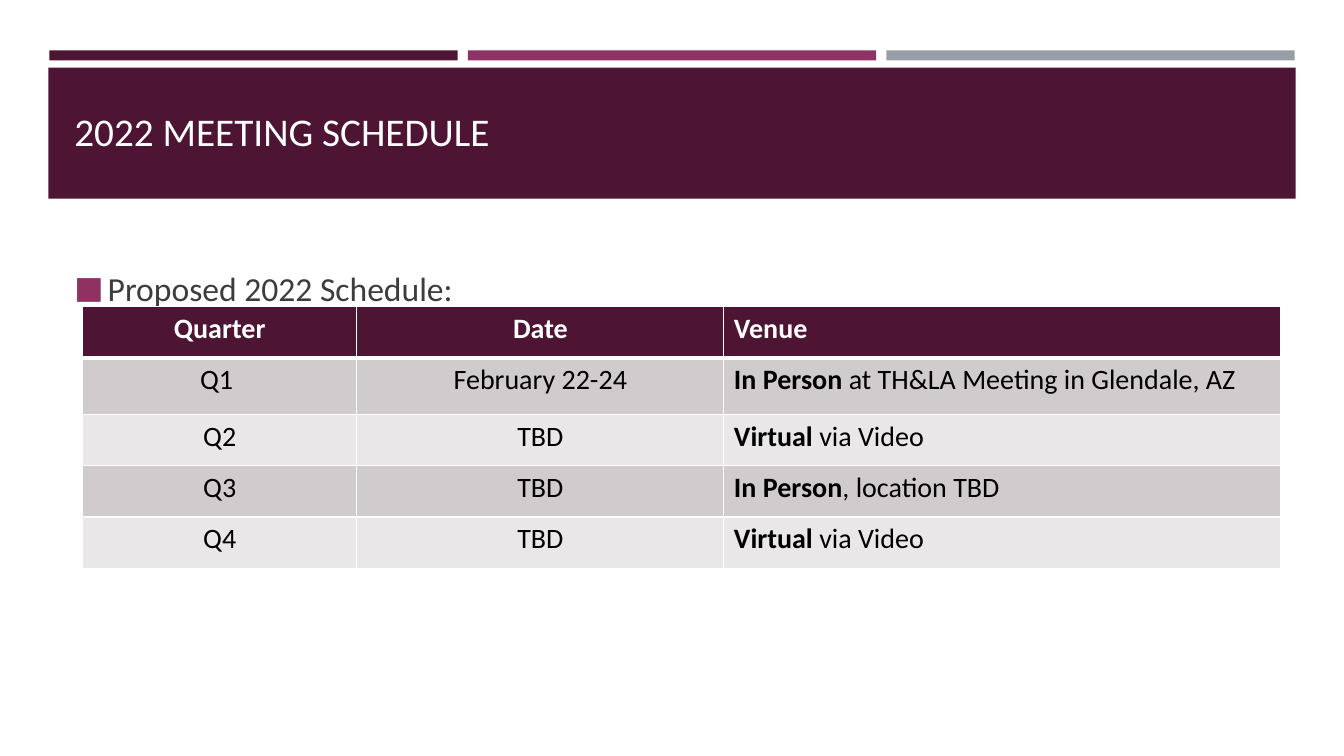
from dataclasses import dataclass

from lxml import etree
from pptx import Presentation
from pptx import util as u
from pptx.dml.color import RGBColor
from pptx.enum import shapes, text
from pptx.oxml import ns


@dataclass(frozen=True)
class Theme:
    font: str = "Calibri"
    plum: str = "4D1434"
    magenta: str = "903163"
    gray: str = "969FA7"
    white: str = "FFFFFF"
    black: str = "000000"
    body_text: str = "3D3D3D"
    bands: tuple = ("D0CCCE", "E9E7E8")
    title_size: int = 28
    body_size: int = 24
    table_size: int = 20


class ScheduleSlide:
    """Holds the theme and the current slide."""

    def __init__(self, deck, theme):
        self.theme = theme
        self.slide = deck.slides.add_slide(deck.slide_layouts[6])

    def bar(self, left, top, width, height, color):
        bar = self.slide.shapes.add_shape(
            shapes.MSO_SHAPE.RECTANGLE, *map(u.Inches, (left, top, width, height)))
        bar.shadow.inherit = False
        bar.fill.solid()
        bar.fill.fore_color.rgb = RGBColor.from_string(color)
        bar.line.fill.background()

    def run(self, paragraph, words, size, color, bold=False):
        run = paragraph.add_run()
        run.text = words
        formats = {"name": self.theme.font, "size": u.Pt(size), "bold": bold}
        for key, value in formats.items():
            setattr(run.font, key, value)
        run.font.color.rgb = RGBColor.from_string(color)

    def text_box(self, left, top, width, height, words, size, color, anchor):
        box = self.slide.shapes.add_textbox(
            *map(u.Inches, (left, top, width, height)))
        formats = {"word_wrap": True, "vertical_anchor": anchor}
        for key, value in formats.items():
            setattr(box.text_frame, key, value)
        paragraph = box.text_frame.paragraphs[0]
        self.run(paragraph, words, size, color)
        return paragraph

    def bullet(self, paragraph, color, indent):
        properties = paragraph._p.get_or_add_pPr()
        properties.set("marL", str(u.Inches(indent)))
        properties.set("indent", str(-u.Inches(indent)))
        bullet_color = etree.SubElement(properties, ns.qn("a:buClr"))
        etree.SubElement(bullet_color, ns.qn("a:srgbClr"), val=color)
        etree.SubElement(properties, ns.qn("a:buSzPct"), val="92000")
        etree.SubElement(properties, ns.qn("a:buFont"), typeface=self.theme.font)
        etree.SubElement(properties, ns.qn("a:buChar"), char="■")

    def borders(self, cell, widths):
        properties = cell._tc.get_or_add_tcPr()
        for index, (side, width) in enumerate(widths.items()):
            line = etree.Element(ns.qn(f"a:ln{side}"), w=str(u.Pt(width)))
            fill = etree.SubElement(line, ns.qn("a:solidFill"))
            etree.SubElement(fill, ns.qn("a:srgbClr"), val=self.theme.white)
            properties.insert(index, line)

    def table(self, left, top, columns, heights, rows):
        theme = self.theme
        table = self.slide.shapes.add_table(
            len(rows), len(columns), u.Inches(left), u.Inches(top),
            u.Inches(sum(columns)), u.Inches(sum(heights))).table
        for column, width in zip(table.columns, columns):
            column.width = u.Inches(width)
        for r, (row, height) in enumerate(zip(rows, heights)):
            table.rows[r].height = u.Inches(height)
            header = r == 0
            for c, pieces in enumerate(row):
                cell = table.cell(r, c)
                cell.fill.solid()
                cell.fill.fore_color.rgb = RGBColor.from_string(
                    theme.plum if header else theme.bands[(r - 1) % 2])
                # A heavier rule separates the header from the rows
                self.borders(cell, {"L": 1, "R": 1, "T": 3 if r == 1 else 1,
                                    "B": 3 if header else 1})
                paragraph = cell.text_frame.paragraphs[0]
                paragraph.alignment = (text.PP_ALIGN.LEFT if c == 2
                                       else text.PP_ALIGN.CENTER)
                for words, bold in pieces:
                    self.run(paragraph, words, theme.table_size,
                             theme.white if header else theme.black, bold)


def plain(*words):
    return [[(word, False)] for word in words]


def main():
    theme = Theme()
    deck = Presentation()
    deck.slide_width, deck.slide_height = u.Inches(13.33), u.Inches(7.5)
    page = ScheduleSlide(deck, theme)

    # Accent strips and title band
    for i, color in enumerate((theme.plum, theme.magenta, theme.gray)):
        page.bar(0.49 + 4.15 * i, 0.5, 4.05, 0.1, color)
    page.bar(0.48, 0.67, 12.37, 1.3, theme.plum)
    page.text_box(0.64, 0.77, 12.06, 1.06, "2022 MEETING SCHEDULE",
                  theme.title_size, theme.white, text.MSO_ANCHOR.MIDDLE)

    # Lead-in bullet
    lead_in = page.text_box(0.64, 2.61, 12.06, 0.5, "Proposed 2022 Schedule:",
                            theme.body_size, theme.body_text, text.MSO_ANCHOR.TOP)
    page.bullet(lead_in, theme.magenta, 0.33)

    # Quarterly schedule
    virtual = [("Virtual", True), (" via Video", False)]
    schedule = [
        [[(heading, True)] for heading in ("Quarter", "Date", "Venue")],
        plain("Q1 ", "February 22-24") + [
            [("In Person ", True), ("at TH&LA Meeting in Glendale, AZ", False)]],
        plain("Q2", "TBD") + [virtual],
        plain("Q3", "TBD") + [[("In Person", True), (", location TBD", False)]],
        plain("Q4", "TBD") + [virtual],
    ]
    page.table(0.82, 3.04, (2.72, 3.64, 5.52),
               (0.51, 0.56, 0.51, 0.51, 0.51), schedule)

    deck.save("out.pptx")


if __name__ == "__main__":
    main()
